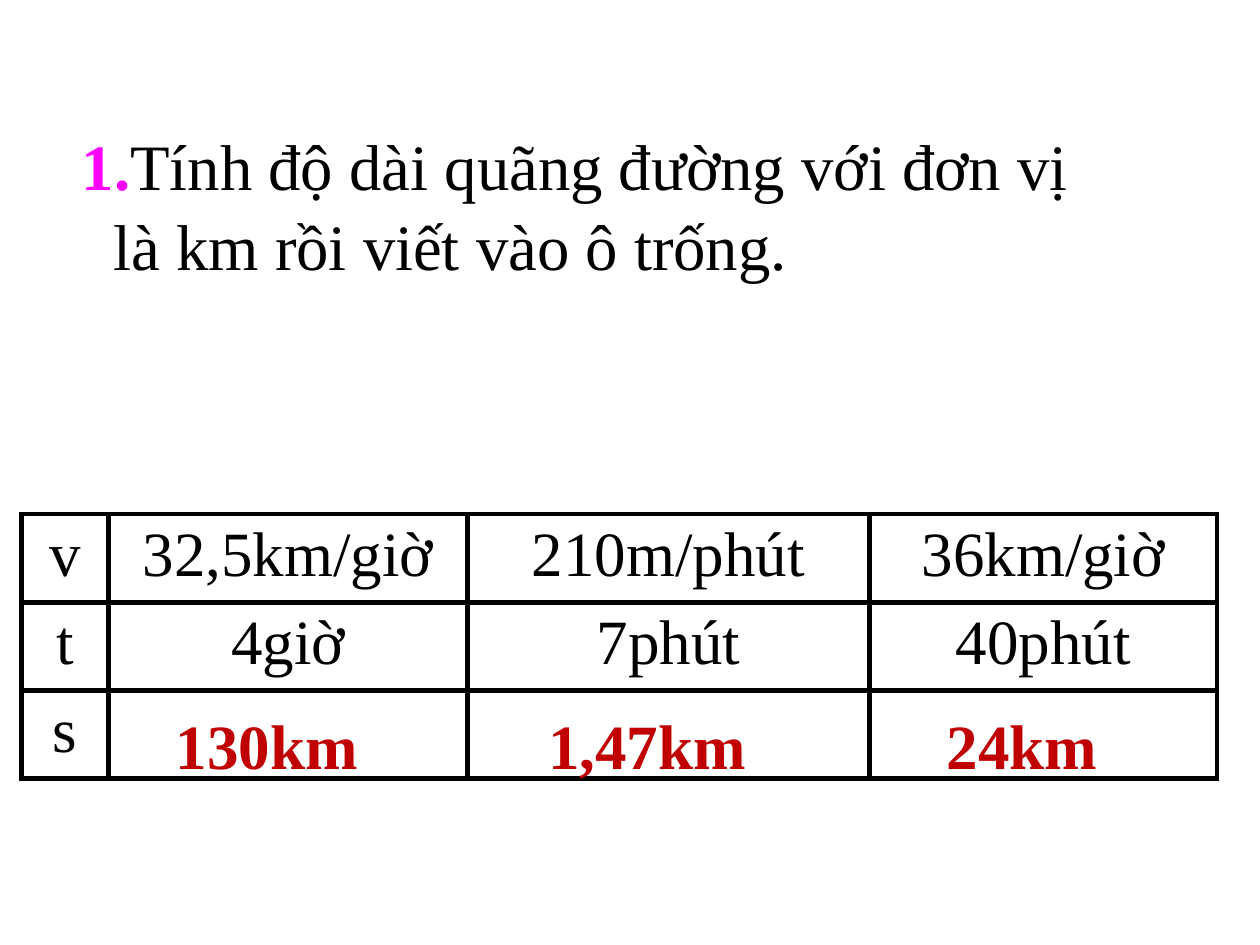
from dataclasses import dataclass
from itertools import accumulate

from lxml.etree import SubElement
from pptx import Presentation
from pptx.dml.color import RGBColor
from pptx.enum.text import MSO_AUTO_SIZE as AutoSize, MSO_ANCHOR as Anchor, PP_ALIGN as Align
from pptx.oxml import parse_xml
from pptx.oxml.ns import nsdecls, qn
from pptx.util import Inches, Pt


@dataclass(frozen=True)
class Theme:
    font: str = "Times New Roman"
    task_size: int = 37
    table_size: int = 36
    border_width: int = 3
    ink: str = "000000"
    number: str = "FF00FF"
    answer: str = "C00000"


theme = Theme()


def set_font(font, size, color, bold=False):
    font.name = theme.font
    font.size = Pt(size)
    font.bold = bold
    font.color.rgb = RGBColor.from_string(color)


def add_borders(cell):
    properties = cell._tc.get_or_add_tcPr()
    for index, side in enumerate(("lnL", "lnR", "lnT", "lnB")):
        properties.insert(index, parse_xml(
            f'<a:{side} {nsdecls("a")} w="{Pt(theme.border_width)}"><a:solidFill>'
            f'<a:srgbClr val="{theme.ink}"/></a:solidFill></a:{side}>'))


presentation = Presentation()
presentation.slide_width = Inches(10)
presentation.slide_height = Inches(7.5)
slide = presentation.slides.add_slide(presentation.slide_layouts[1])

# Task statement
title = slide.shapes.title
title.element.getparent().remove(title.element)
task = slide.placeholders[1]
task.left, task.top = Inches(0.42), Inches(0.88)
task.width, task.height = Inches(8.42), Inches(1.25)
frame = task.text_frame
frame.auto_size = AutoSize.NONE
frame.vertical_anchor = Anchor.TOP
frame.margin_top = Inches(0.09)
paragraph = frame.paragraphs[0]
paragraph.space_before = Pt(0)
paragraph.line_spacing = 1.04
properties = paragraph._p.get_or_add_pPr()
properties.set("marL", str(Inches(0.38)))
properties.set("indent", str(-Inches(0.38)))
SubElement(properties, qn("a:buNone"))
for text, color, bold in (
    (" 1.", theme.number, True),
    ("Tính độ dài quãng đường với đơn vị là km rồi viết vào ô trống.", theme.ink, False),
):
    run = paragraph.add_run()
    run.text = text
    set_font(run.font, theme.task_size, color, bold)

# Table of speed, time and distance
rows = [
    ["v", "32,5km/giờ", "210m/phút", "36km/giờ"],
    ["t", "4giờ", "7phút", "40phút"],
    ["s", "", "", ""],
]
column_widths = [0.69, 2.85, 3.19, 2.76]
row_height = 0.7
table = slide.shapes.add_table(
    len(rows), len(column_widths), Inches(0.17), Inches(4.08),
    Inches(sum(column_widths)), Inches(row_height * len(rows))).table
table.first_row = False
table.horz_banding = False
for column, width in zip(table.columns, column_widths):
    column.width = Inches(width)
for row, texts in zip(table.rows, rows):
    row.height = Inches(row_height)
    for cell, text in zip(row.cells, texts):
        cell.fill.background()
        add_borders(cell)
        if text:
            cell.text = text
            paragraph = cell.text_frame.paragraphs[0]
            paragraph.alignment = Align.CENTER
            set_font(paragraph.font, theme.table_size, theme.ink)

# Answers over the last row
answers = ["130km", "1,47km", "24km"]
for text, left, width in zip(answers, accumulate(column_widths), column_widths[1:]):
    box = slide.shapes.add_textbox(Inches(left), Inches(5.5), Inches(width), Inches(0.5))
    frame = box.text_frame
    frame.word_wrap = True
    frame.margin_top = Inches(0.11)
    paragraph = frame.paragraphs[0]
    paragraph.text = text
    paragraph.alignment = Align.CENTER
    set_font(paragraph.font, theme.table_size, theme.answer, bold=True)

presentation.save("out.pptx")
